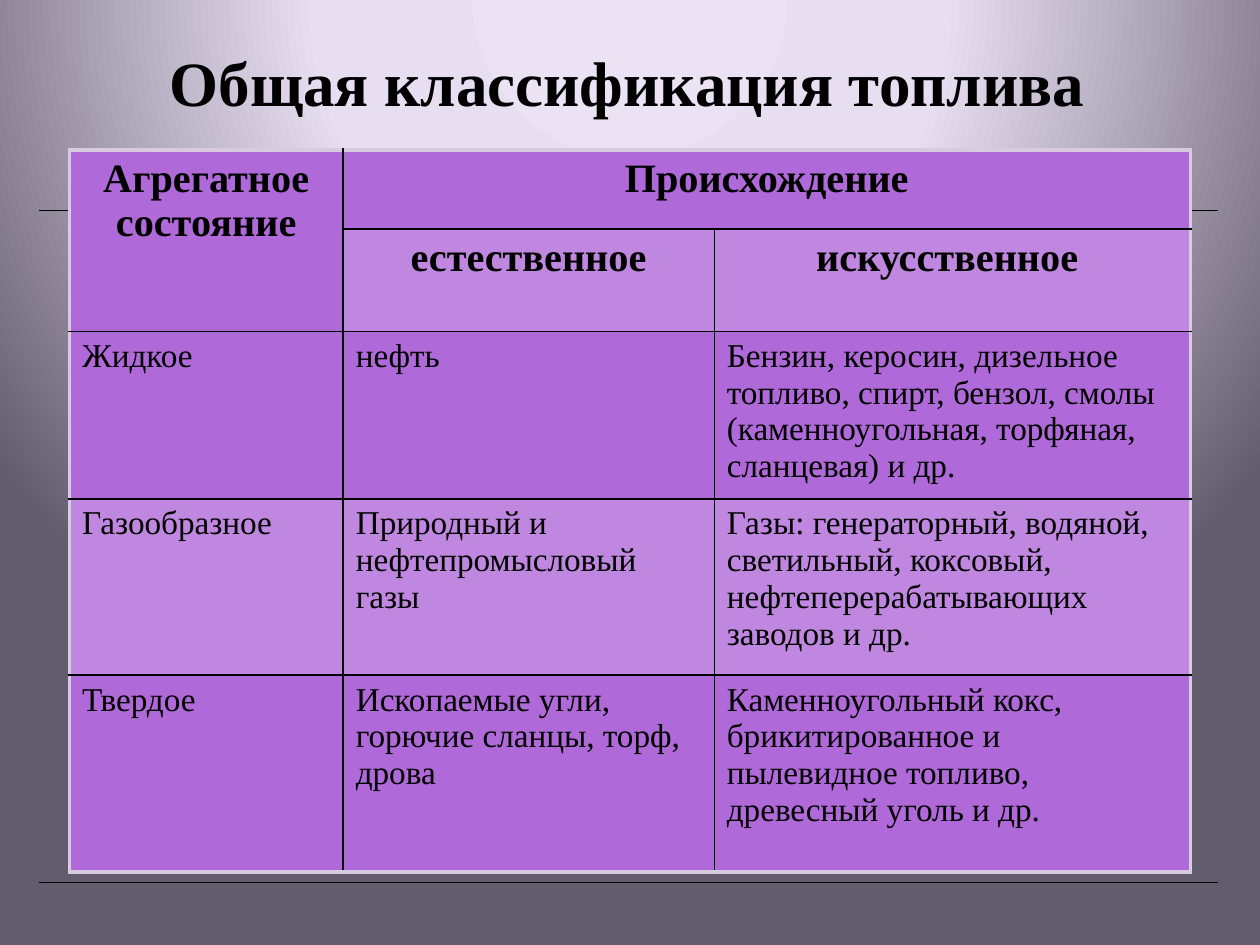
from pptx import Presentation
from pptx.dml.color import RGBColor
from pptx.enum.shapes import MSO_CONNECTOR
from pptx.enum.text import MSO_ANCHOR, PP_ALIGN
from pptx.oxml import parse_xml
from pptx.oxml.ns import nsdecls
from pptx.util import Cm, Pt

FONT = "Times New Roman"
BLACK = "000000"
FRAME = "D7CAE1"
PURPLE, LIGHT_PURPLE = "AF69D8", "BF87E0"
BACKGROUND_STOPS = [(0, "EBE3F4"), (40, "E7DEF2"), (100, "635B6E")]

COLUMN_WIDTHS = [5.52, 7.48, 9.6]
ROW_HEIGHTS = [1.6, 2.06, 3.38, 3.55, 3.96]
HEADER_ROWS = 2
ROWS = [
    ["Агрегатное состояние", "Происхождение", ""],
    ["", "естественное", "искусственное "],
    ["Жидкое", "нефть",
     "Бензин, керосин, дизельное топливо, спирт, бензол, смолы "
     "(каменноугольная, торфяная, сланцевая) и др."],
    ["Газообразное", "Природный и нефтепромысловый газы",
     "Газы: генераторный, водяной, светильный, коксовый, "
     "нефтеперерабатывающих заводов и др."],
    ["Твердое", "Ископаемые угли, горючие сланцы, торф, дрова",
     "Каменноугольный кокс, брикитированное и пылевидное топливо, "
     "древесный уголь и др."],
]


def color(value):
    return RGBColor.from_string(value)


def set_text(text_frame, text, size, bold=False, align=PP_ALIGN.LEFT):
    text_frame.word_wrap = True
    paragraph = text_frame.paragraphs[0]
    paragraph.alignment = align
    run = paragraph.add_run()
    run.text = text
    run.font.name = FONT
    run.font.size = Pt(size)
    run.font.bold = bold
    run.font.color.rgb = color(BLACK)


def set_background(slide):
    """Fill the background with a circular gradient centred above the slide."""
    slide.background.fill.solid()
    solid = slide.element.xpath("./p:cSld/p:bg/p:bgPr/a:solidFill")[0]
    stops = "".join(
        f'<a:gs pos="{position * 1000}"><a:srgbClr val="{value}"/></a:gs>'
        for position, value in BACKGROUND_STOPS)
    gradient = parse_xml(
        f'<a:gradFill {nsdecls("a")} rotWithShape="1"><a:gsLst>{stops}</a:gsLst>'
        '<a:path path="circle"><a:fillToRect l="50000" t="-80000" '
        'r="50000" b="180000"/></a:path></a:gradFill>')
    solid.getparent().replace(solid, gradient)


def add_title(slide, text):
    title = slide.shapes.title
    title.left, title.top, title.width, title.height = Cm(1.73), Cm(0.36), Cm(21.82), Cm(3.63)
    title.text_frame.vertical_anchor = MSO_ANCHOR.BOTTOM
    title.text_frame.margin_bottom = Cm(1.58)
    set_text(title.text_frame, text, 36, bold=True, align=PP_ALIGN.CENTER)


def add_rule(slide, y):
    rule = slide.shapes.add_connector(
        MSO_CONNECTOR.STRAIGHT, Cm(0.79), Cm(y), Cm(24.56), Cm(y))
    rule.line.color.rgb = color(BLACK)
    rule.line.width = Pt(0.25)
    rule.element.spPr.append(parse_xml(f'<a:effectLst {nsdecls("a")}/>'))


def set_borders(cell, outer_sides):
    """Draw the frame on the outer sides and thin black lines on the others."""
    properties = cell._tc.get_or_add_tcPr()
    for index, side in enumerate("LRTB"):
        value, width = (FRAME, 2.5) if side in outer_sides else (BLACK, 1)
        properties.insert(index, parse_xml(
            f'<a:ln{side} {nsdecls("a")} w="{Pt(width)}"><a:solidFill>'
            f'<a:srgbClr val="{value}"/></a:solidFill></a:ln{side}>'))


def outer_sides(cell, row, column):
    """Return the letters of the cell sides that lie on the table's edge."""
    edges = {
        "L": column == 0,
        "R": column + cell.span_width == len(COLUMN_WIDTHS),
        "T": row == 0,
        "B": row + cell.span_height == len(ROW_HEIGHTS),
    }
    return [side for side, on_edge in edges.items() if on_edge]


def add_fuel_table(slide):
    table = slide.shapes.add_table(
        len(ROW_HEIGHTS), len(COLUMN_WIDTHS), Cm(1.4), Cm(3.02),
        Cm(sum(COLUMN_WIDTHS)), Cm(sum(ROW_HEIGHTS))).table
    for column, width in zip(table.columns, COLUMN_WIDTHS):
        column.width = Cm(width)
    for row, height in zip(table.rows, ROW_HEIGHTS):
        row.height = Cm(height)
    table.cell(0, 0).merge(table.cell(1, 0))
    table.cell(0, 1).merge(table.cell(0, 2))

    for row, texts in enumerate(ROWS):
        for column, text in enumerate(texts):
            cell = table.cell(row, column)
            cell.fill.solid()
            cell.fill.fore_color.rgb = color(LIGHT_PURPLE if row % 2 else PURPLE)
            if cell.is_spanned:
                continue
            set_borders(cell, outer_sides(cell, row, column))
            if row < HEADER_ROWS:
                set_text(cell.text_frame, text, 23, bold=True, align=PP_ALIGN.CENTER)
            else:
                set_text(cell.text_frame, text, 19)


def main():
    presentation = Presentation()
    presentation.slide_width, presentation.slide_height = Cm(25.4), Cm(19.05)
    slide = presentation.slides.add_slide(presentation.slide_layouts[5])
    set_background(slide)
    for y in (4.24, 17.78):
        add_rule(slide, y)
    add_title(slide, "Общая классификация топлива")
    add_fuel_table(slide)
    presentation.save("out.pptx")


if __name__ == "__main__":
    main()
